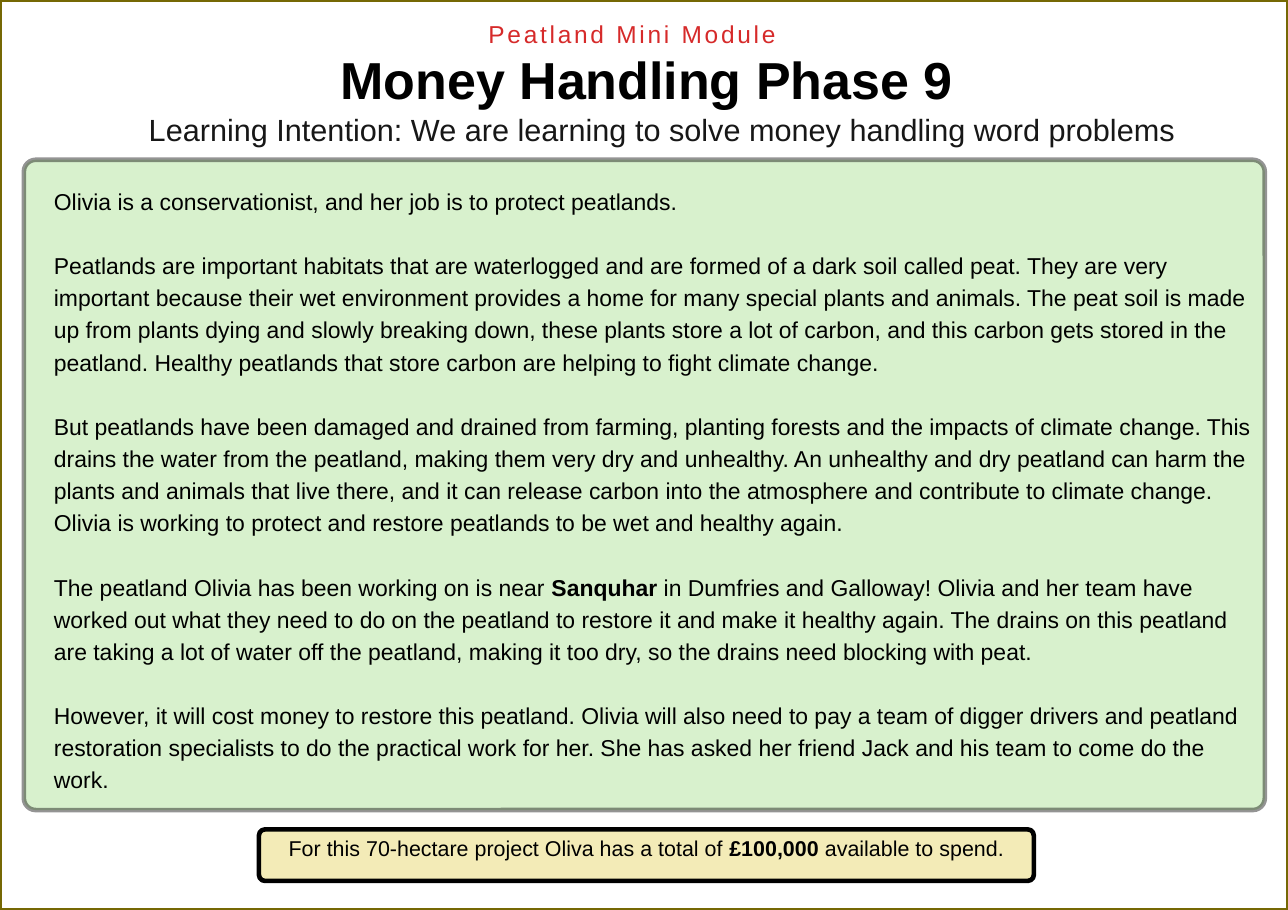
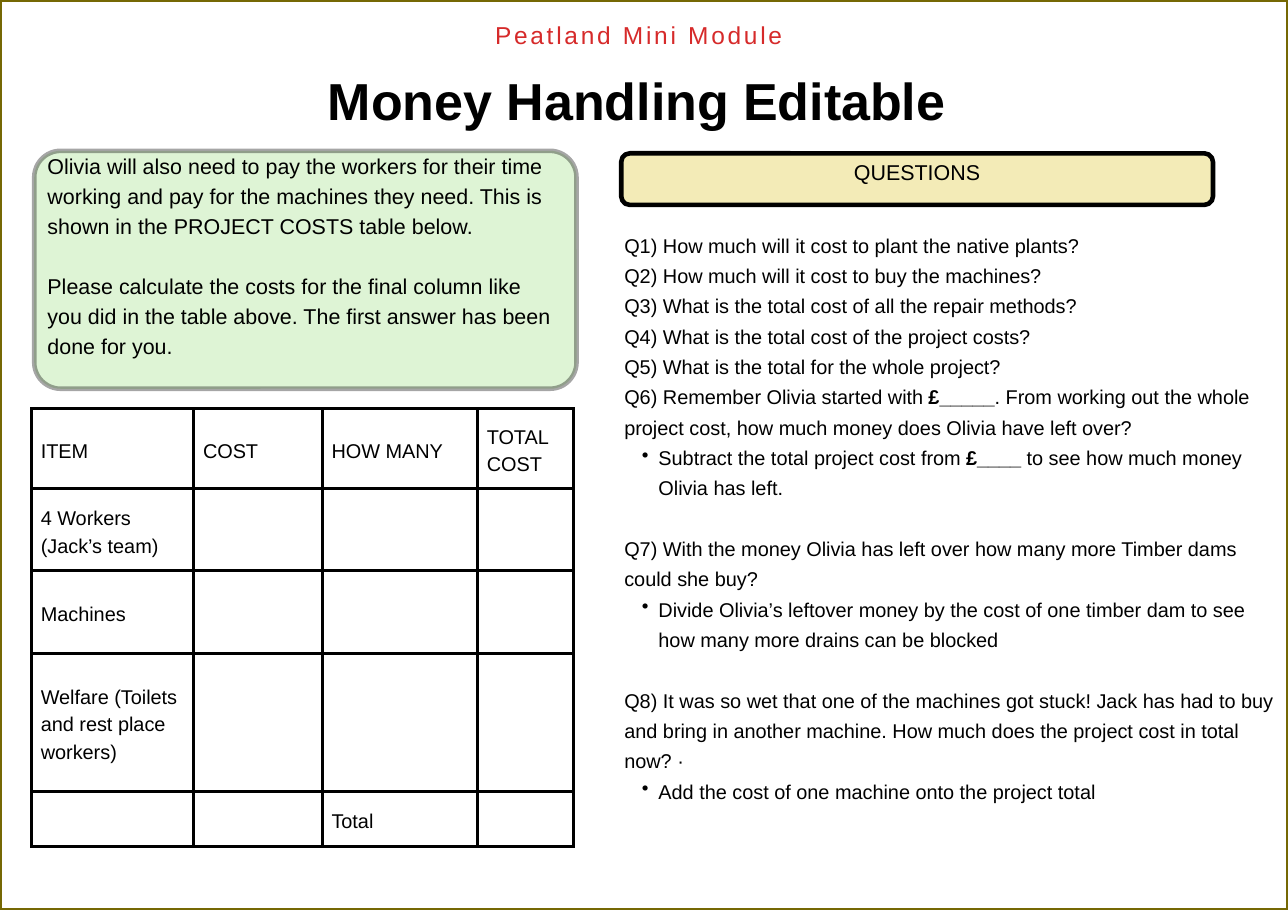
import pptx
import pptx.dml.color
import pptx.enum.shapes
import pptx.enum.text
import pptx.oxml
import pptx.oxml.ns
import pptx.util

Pt = pptx.util.Pt
ALIGN = pptx.enum.text.PP_ALIGN
ANCHOR = pptx.enum.text.MSO_ANCHOR
SHAPE = pptx.enum.shapes.MSO_SHAPE

WIDTH, HEIGHT = 841.68, 594.72
FONT = "Arial"
COLORS = {
    "text": "000000",
    "intention": "171717",
    "module": "D62A2A",
    "frame": "756804",
    "green": "A3E089",
    "yellow": "F3EBB7",
}

# Each inner list is a block of paragraphs; ** marks bold, "• " marks a bullet
STORY = [
    ["Olivia is a conservationist, and her job is to protect peatlands."],
    ["Peatlands are important habitats that are waterlogged and are formed of a dark soil called peat. "
     "They are very important because their wet environment provides a home for many special plants and "
     "animals. The peat soil is made up from plants dying and slowly breaking down, these plants store a "
     "lot of carbon, and this carbon gets stored in the peatland. Healthy peatlands that store carbon are "
     "helping to fight climate change."],
    ["But peatlands have been damaged and drained from farming, planting forests and the impacts of climate "
     "change. This drains the water from the peatland, making them very dry and unhealthy. An unhealthy and "
     "dry peatland can harm the plants and animals that live there, and it can release carbon into the "
     "atmosphere and contribute to climate change.",
     "Olivia is working to protect and restore peatlands to be wet and healthy again."],
    ["The peatland Olivia has been working on is near **Sanquhar** in Dumfries and Galloway! Olivia and her "
     "team have worked out what they need to do on the peatland to restore it and make it healthy again. "
     "The drains on this peatland are taking a lot of water off the peatland, making it too dry, so the "
     "drains need blocking with peat."],
    ["However, it will cost money to restore this peatland. Olivia will also need to pay a team of digger "
     "drivers and peatland restoration specialists to do the practical work for her. She has asked her "
     "friend Jack and his team to come do the work."],
]

INSTRUCTIONS = [
    ["Olivia will also need to pay the workers for their time working and pay for the machines they need. "
     "This is shown in the PROJECT COSTS table below."],
    ["Please calculate the costs for the final column like you did in the table above. "
     "The first answer has been done for you."],
]

QUESTIONS = [
    ["Q1) How much will it cost to plant the native plants?",
     "Q2) How much will it cost to buy the machines?",
     "Q3) What is the total cost of all the repair methods?",
     "Q4) What is the total cost of the project costs?",
     "Q5) What is the total for the whole project?",
     "Q6) Remember Olivia started with **£_____**. From working out the whole project cost, "
     "how much money does Olivia have left over?",
     "• Subtract the total project cost from **£____** to see how much money Olivia has left."],
    ["Q7) With the money Olivia has left over how many more Timber dams could she buy?",
     "• Divide Olivia’s leftover money by the cost of one timber dam to see how many more drains "
     "can be blocked"],
    ["Q8) It was so wet that one of the machines got stuck! Jack has had to buy and bring in another "
     "machine. How much does the project cost in total now? ·",
     "• Add the cost of one machine onto the project total"],
]

COST_ROWS = [
    ["ITEM", "COST", "HOW MANY", "TOTAL COST"],
    ["4 Workers (Jack’s team)", "", "", ""],
    ["Machines", "", "", ""],
    ["Welfare (Toilets and rest place workers)", "", "", ""],
    ["", "", "Total", ""],
]


def rgb(name):
    return pptx.dml.color.RGBColor.from_string(COLORS[name])


class Worksheet:
    """Holds the shared style and the slide being built."""

    def __init__(self):
        self.presentation = pptx.Presentation()
        self.presentation.slide_width = Pt(WIDTH)
        self.presentation.slide_height = Pt(HEIGHT)
        self.slide = None

    def new_slide(self):
        self.slide = self.presentation.slides.add_slide(self.presentation.slide_layouts[6])

    def set_text(self, frame, blocks, size, spacing=None, color="text", bold=False, align=ALIGN.LEFT,
                 tracking=None):
        """Fill a text frame; later blocks start one line lower."""
        frame.word_wrap = True
        lines = [(line, number > 0 and position == 0)
                 for number, block in enumerate(blocks) for position, line in enumerate(block)]
        for index, (line, gap) in enumerate(lines):
            paragraph = frame.add_paragraph() if index else frame.paragraphs[0]
            paragraph.alignment = align
            if spacing:
                paragraph.line_spacing = Pt(spacing)
                paragraph.space_before = Pt(spacing if gap else 0)
            if line.startswith("• "):
                self.bullet(paragraph)
            for part, text in enumerate(line.removeprefix("• ").split("**")):
                if not text:
                    continue
                run = paragraph.add_run()
                run.text = text
                run.font.name = FONT
                run.font.size = Pt(size)
                run.font.bold = bold or part % 2 == 1
                run.font.color.rgb = rgb(color)
                if tracking:
                    run.font._element.set("spc", str(round(tracking * 100)))

    def bullet(self, paragraph):
        properties = paragraph._p.get_or_add_pPr()
        properties.set("marL", str(Pt(22.3)))
        properties.set("indent", str(Pt(-10.8)))
        properties.append(pptx.oxml.parse_xml(
            f'<a:buChar {pptx.oxml.ns.nsdecls("a")} char="•"/>'))

    def margins(self, frame, left=0, top=0, right=0, bottom=0):
        frame.margin_left, frame.margin_top = Pt(left), Pt(top)
        frame.margin_right, frame.margin_bottom = Pt(right), Pt(bottom)

    def text(self, left, top, width, height, blocks, size, spacing=None, **style):
        box = self.slide.shapes.add_textbox(Pt(left), Pt(top), Pt(width), Pt(height))
        self.margins(box.text_frame)
        self.set_text(box.text_frame, blocks, size, spacing, **style)

    def box(self, kind, left, top, width, height, fill=None, line="text", weight=3):
        shape = self.slide.shapes.add_shape(kind, Pt(left), Pt(top), Pt(width), Pt(height))
        shape.shadow.inherit = False
        if fill:
            shape.fill.solid()
            shape.fill.fore_color.rgb = rgb(fill)
        else:
            shape.fill.background()
        shape.line.color.rgb = rgb(line)
        shape.line.width = Pt(weight)
        return shape

    def panel(self, left, top, width, height, radius, fill, opacity=100):
        shape = self.box(SHAPE.ROUNDED_RECTANGLE, left, top, width, height, fill)
        shape.adjustments[0] = radius / min(width, height)
        if opacity < 100:
            for color in shape.element.spPr.iter(pptx.oxml.ns.qn("a:srgbClr")):
                color.append(pptx.oxml.parse_xml(
                    f'<a:alpha {pptx.oxml.ns.nsdecls("a")} val="{opacity * 1000}"/>'))
        return shape

    def banner(self, left, top, width, radius, text):
        shape = self.panel(left, top, width, 33.7, radius, "yellow")
        frame = shape.text_frame
        self.margins(frame, left=5, right=5, bottom=12)
        frame.vertical_anchor = ANCHOR.MIDDLE
        self.set_text(frame, [[text]], 14, 19.6, align=ALIGN.CENTER)

    def heading(self, title, title_left, title_top, module_left, module_top):
        self.text(title_left, title_top, 723, 46, [[title]], 34, 50.4, bold=True, align=ALIGN.CENTER)
        self.text(module_left, module_top, 344, 20, [["Peatland Mini Module"]], 16, 22.4,
                  color="module", align=ALIGN.CENTER, tracking=1.8)

    def frame(self):
        self.box(SHAPE.RECTANGLE, 0, 0, WIDTH, HEIGHT, line="frame", weight=2.25)

    def table(self, left, top, widths, heights, rows):
        graphic = self.slide.shapes.add_table(len(heights), len(widths), Pt(left), Pt(top),
                                              Pt(sum(widths)), Pt(sum(heights)))
        table = graphic.table
        table.first_row = table.horz_banding = False
        for column, width in zip(table.columns, widths):
            column.width = Pt(width)
        for row, height, texts in zip(table.rows, heights, rows):
            row.height = Pt(height)
            for cell, text in zip(row.cells, texts):
                cell.fill.background()
                cell.vertical_anchor = ANCHOR.MIDDLE
                self.margins(cell, 6, 6, 6, 6)
                self.set_text(cell.text_frame, [[text]], 13, 18.2)
                self.borders(cell)

    def borders(self, cell):
        properties = cell._tc.get_or_add_tcPr()
        for index, side in enumerate("LRTB"):
            properties.insert(index, pptx.oxml.parse_xml(
                f'<a:ln{side} {pptx.oxml.ns.nsdecls("a")} w="{Pt(2.25)}"><a:solidFill>'
                f'<a:srgbClr val="{COLORS["text"]}"/></a:solidFill></a:ln{side}>'))


def build_story(sheet):
    sheet.new_slide()
    # Story panel and budget
    sheet.panel(15.6, 104.4, 811, 425, 7.8, "green", 42)
    sheet.banner(169.2, 542, 506.4, 4,
                 "For this 70-hectare project Oliva has a total of **£100,000** available to spend.")
    # Heading
    sheet.heading("Money Handling Phase 9", 61.2, 21.6, 241.2, 9.4)
    sheet.text(35.2, 119.5, 791.4, 422, STORY, 15, 21)
    sheet.frame()
    sheet.text(97.2, 72.7, 694, 24.5,
               [["Learning Intention: We are learning to solve money handling word problems"]],
               20, color="intention")


def build_questions(sheet):
    sheet.new_slide()
    # Instructions and project costs
    sheet.panel(22.4, 98.6, 354.4, 155.5, 17.3, "green", 35)
    sheet.text(31, 97.2, 334, 140, INSTRUCTIONS, 14, 19.6)
    sheet.table(20.7, 267, [106, 84, 101.5, 62.7], [52, 54, 54, 90, 36], COST_ROWS)
    # Questions
    sheet.banner(406, 100.2, 386.7, 5.6, "QUESTIONS")
    sheet.text(408, 148.3, 424.2, 423, QUESTIONS, 13, 19.8)
    # Heading
    sheet.heading("Money Handling Editable", 54.7, 35.3, 245.5, 10.1)
    sheet.frame()


def main():
    sheet = Worksheet()
    build_story(sheet)
    build_questions(sheet)
    sheet.presentation.save("out.pptx")


if __name__ == "__main__":
    main()
